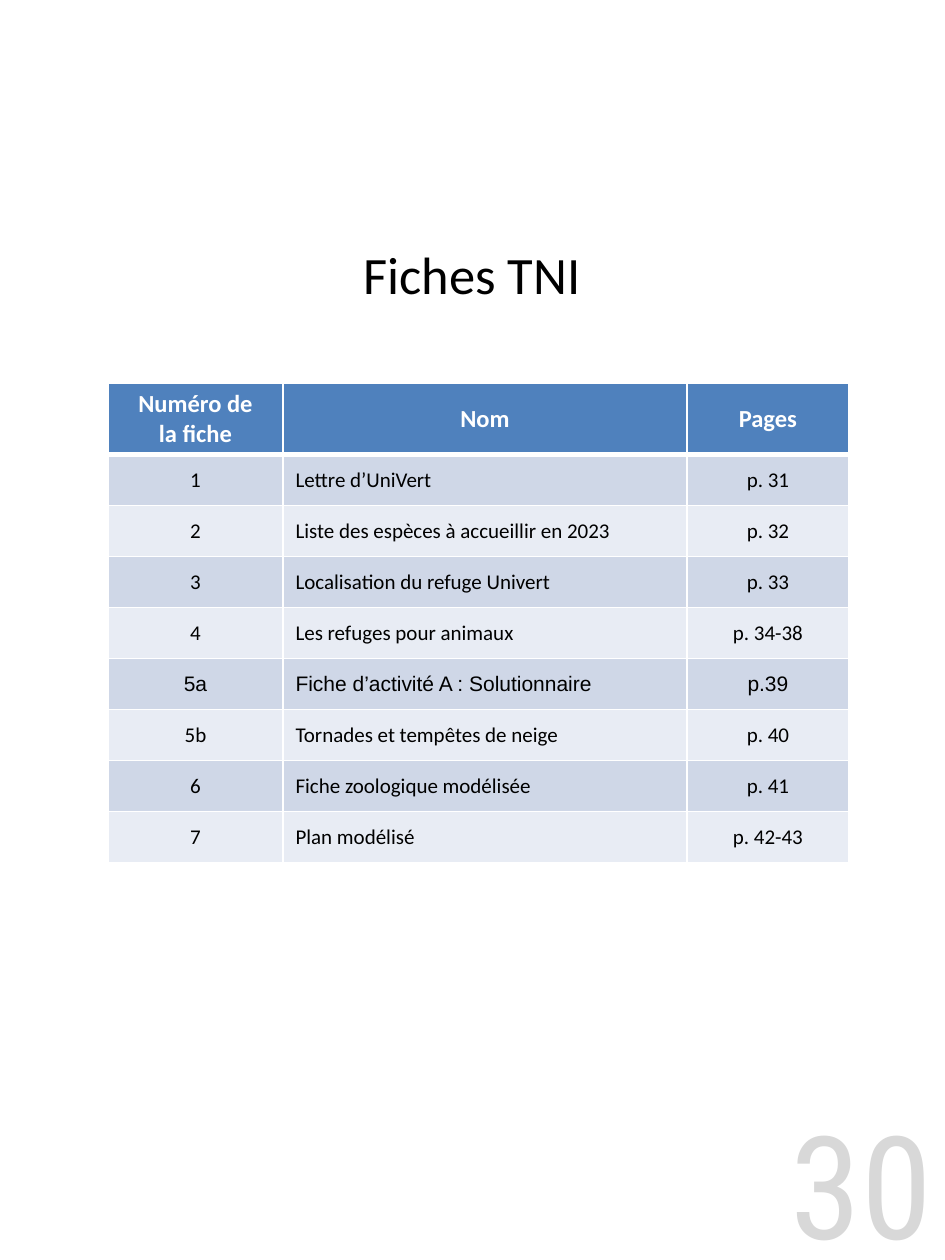
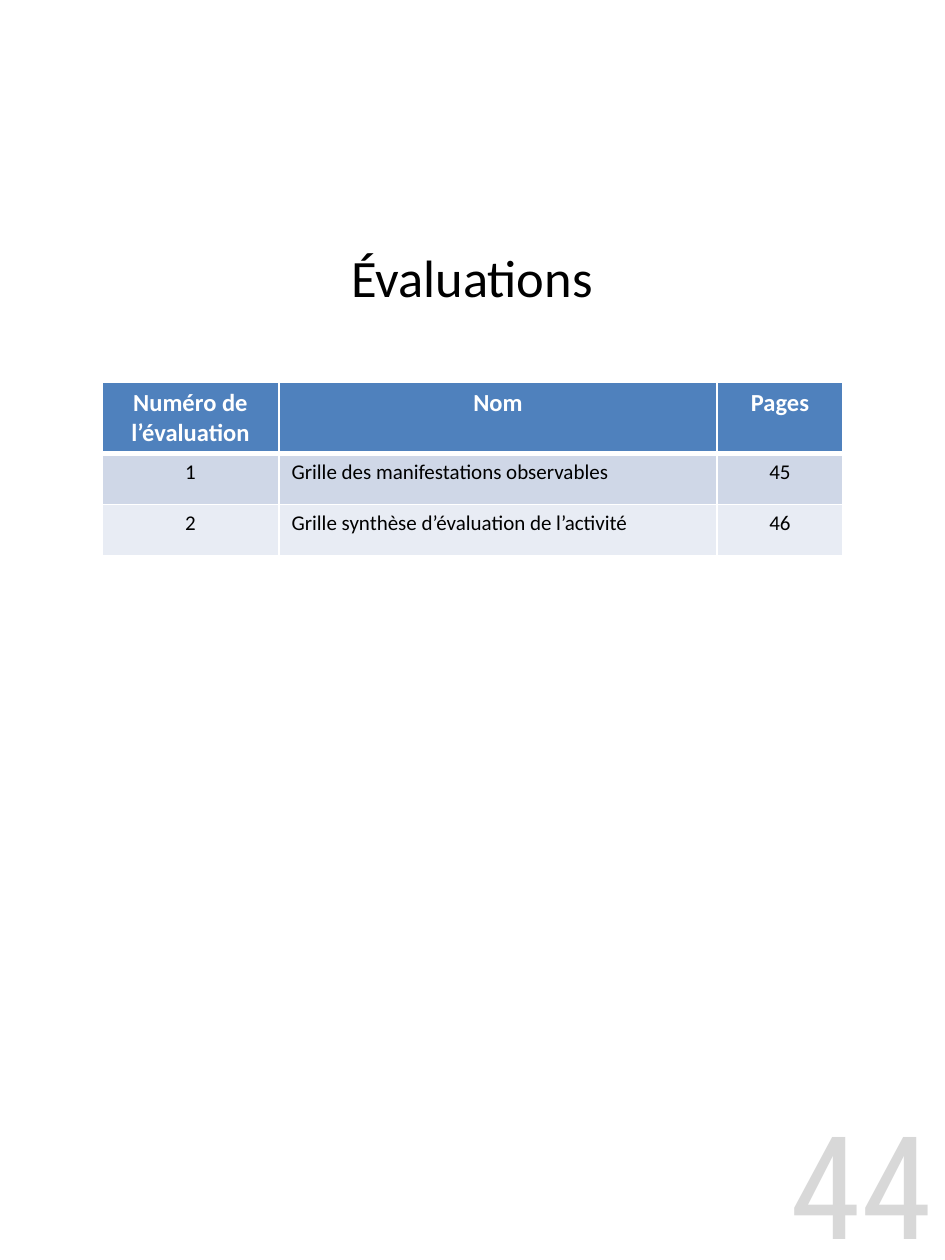
from pptx import Presentation
from pptx.dml.color import RGBColor as RGB
from pptx.enum.text import MSO_ANCHOR as Anchor, PP_ALIGN as Align
from pptx.oxml.ns import qn
from pptx.util import Emu, Pt
from lxml.etree import SubElement as Sub

WHITE = RGB(0xFF, 0xFF, 0xFF)
BLACK = RGB(0x00, 0x00, 0x00)
BLUE = RGB(0x4F, 0x81, 0xBD)
DARK = RGB(0xCF, 0xD7, 0xE7)
PALE = RGB(0xE8, 0xEC, 0xF4)
GREY = RGB(0xD8, 0xD8, 0xD8)
FONT = "Calibri"
HEAD_H, ROW_H = 71, 51

SHEETS = [
    ("1", "Lettre d’UniVert", "p. 31"),
    ("2", "Liste des espèces à accueillir en 2023", "p. 32"),
    ("3", "Localisation du refuge Univert", "p. 33"),
    ("4", "Les refuges pour animaux", "p. 34-38"),
    ("5a", "Fiche d’activité A : Solutionnaire", "p.39"),
    ("5b", "Tornades et tempêtes de neige", "p. 40"),
    ("6", "Fiche zoologique modélisée", "p. 41"),
    ("7", "Plan modélisé", "p. 42-43"),
]
GRIDS = [
    ("1", "Grille des manifestations observables", "45"),
    ("2", "Grille synthèse d’évaluation de l’activité", "46"),
]


def px(n):
    return Emu(round(n * 914400 / 126))


def style(frame, align, size, color, name=FONT, bold=False):
    for para in frame.paragraphs:
        para.alignment = align
        font = para.font
        font.name, font.size, font.bold = name, Pt(size), bold
        font.color.rgb = color


def add_text(slide, box, text, align, size, color, name=FONT):
    frame = slide.shapes.add_textbox(*map(px, box)).text_frame
    frame.word_wrap = True
    frame.vertical_anchor = Anchor.MIDDLE
    frame.text = text
    style(frame, align, size, color, name)


def add_title(slide, top, text):
    add_text(slide, (178, top, 588, 120), text, Align.CENTER, 30, BLACK)


def add_page(slide, number):
    """Write the big page number in the lower right corner."""
    add_text(slide, (730, 1104, 215, 156), number, Align.RIGHT, 82, GREY,
             "Roboto Condensed")


def add_edges(cell, top, bottom):
    """Give a cell white borders; top and bottom are widths in points."""
    props = cell._tc.get_or_add_tcPr()
    for tag, width in (("lnL", 1), ("lnR", 1), ("lnT", top), ("lnB", bottom)):
        line = Sub(props, qn("a:" + tag), w=str(Pt(width)))
        fill = Sub(line, qn("a:solidFill"))
        Sub(fill, qn("a:srgbClr"), val=str(WHITE))


def fill_cell(cell, text, row, col, anchor, name):
    head = row == 0
    add_edges(cell, 3 if row == 1 else 1, 3 if head else 1)
    cell.fill.solid()
    cell.fill.fore_color.rgb = BLUE if head else DARK if row % 2 else PALE
    cell.vertical_anchor = anchor
    cell.text = text
    align = Align.LEFT if col == 1 and not head else Align.CENTER
    style(cell.text_frame, align, 14 if head else 12,
          WHITE if head else BLACK, name, head)


def add_index(slide, left, top, widths, label, items, anchor):
    """Add the table that lists the documents and their pages."""
    rows = [(label, "Nom", "Pages"), *items]
    high = HEAD_H + ROW_H * len(items)
    table = slide.shapes.add_table(
        len(rows), len(widths), px(left), px(top), px(sum(widths)), px(high)
    ).table
    for column, width in zip(table.columns, widths):
        column.width = px(width)
    for r, texts in enumerate(rows):
        table.rows[r].height = px(ROW_H if r else HEAD_H)
        name = "Arial" if texts[0] == "5a" else FONT
        for c, text in enumerate(texts):
            fill_cell(table.cell(r, c), text, r, c, anchor, name)


def main():
    deck = Presentation()
    deck.slide_width, deck.slide_height = px(945), px(1260)
    blank = deck.slide_layouts[6]

    slide = deck.slides.add_slide(blank)
    add_page(slide, "30")
    add_index(slide, 108, 383, (175, 404, 162), "Numéro de\nla fiche",
              SHEETS, Anchor.MIDDLE)
    add_title(slide, 213, "Fiches TNI")

    slide = deck.slides.add_slide(blank)
    add_title(slide, 217, "Évaluations")
    add_index(slide, 102, 382, (177, 438, 126), "Numéro de\nl’évaluation",
              GRIDS, Anchor.TOP)
    add_page(slide, "44")

    deck.save("out.pptx")


if __name__ == "__main__":
    main()
